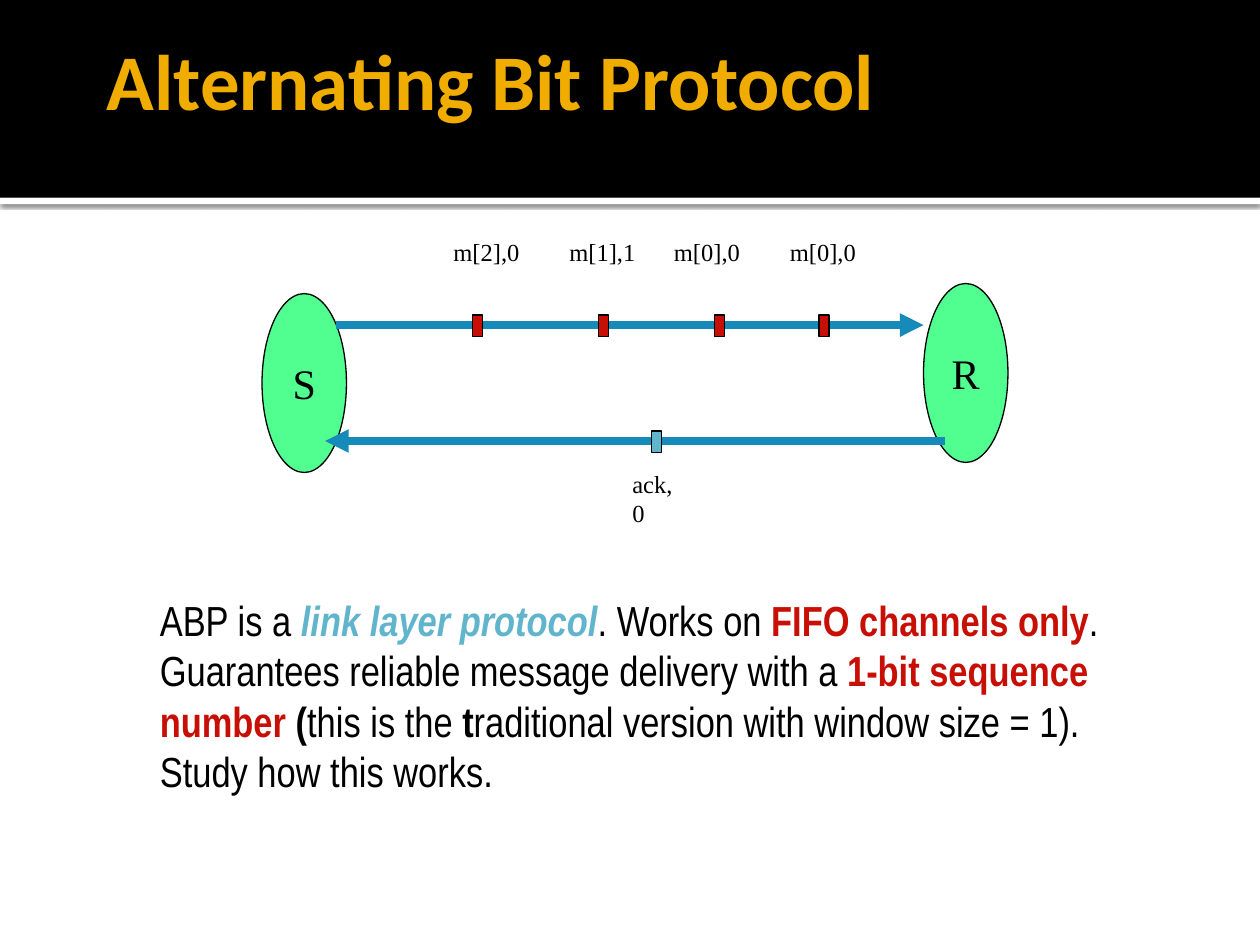
from lxml import etree
from pptx import Presentation
from pptx.dml.color import RGBColor
from pptx.enum import shapes, text
from pptx.oxml import ns
from pptx.util import Inches, Pt

COLORS = {
    "black": "000000",
    "white": "FFFFFF",
    "gold": "F0AD00",
    "green": "51FF91",
    "blue": "168BBA",
    "sky": "60B5CC",
    "red": "C70F05",
}


def color(name):
    return RGBColor.from_string(COLORS[name])


class ProtocolSlide:
    serif = "Times New Roman"
    label_size = 14

    def __init__(self, deck):
        self.page = deck.slides.add_slide(deck.slide_layouts[6])

    def shape(self, kind, left, top, width, height, fill, outlined=True):
        shape = self.page.shapes.add_shape(
            kind, Inches(left), Inches(top), Inches(width), Inches(height))
        shape.shadow.inherit = False
        shape.fill.solid()
        shape.fill.fore_color.rgb = color(fill)
        if outlined:
            shape.line.color.rgb = color("black")
            shape.line.width = Pt(0.75)
        else:
            shape.line.fill.background()
        return shape

    def band(self, top, height, fill):
        return self.shape(shapes.MSO_SHAPE.RECTANGLE, 0, top, 10, height, fill, False)

    def drop_shadow(self, shape):
        effects = shape._element.spPr.find(ns.qn("a:effectLst"))
        shadow = etree.SubElement(
            effects, ns.qn("a:outerShdw"), blurRad=str(Pt(2.5)),
            dist=str(Pt(0.8)), dir="5400000", algn="t", rotWithShape="0")
        tint = etree.SubElement(shadow, ns.qn("a:srgbClr"), val=COLORS["black"])
        etree.SubElement(tint, ns.qn("a:alpha"), val="60000")

    def style(self, span, size, font, ink="black", bold=False, italic=False):
        span.font.size = Pt(size)
        span.font.name = font
        span.font.color.rgb = color(ink)
        span.font.bold = bold
        span.font.italic = italic

    def node(self, left, top, name):
        oval = self.shape(shapes.MSO_SHAPE.OVAL, left, top, 0.67, 1.42, "green")
        frame = oval.text_frame
        frame.word_wrap = False
        frame.vertical_anchor = text.MSO_ANCHOR.MIDDLE
        frame.text = name
        para = frame.paragraphs[0]
        para.alignment = text.PP_ALIGN.CENTER
        self.style(para.runs[0], 24, self.serif)

    def packet(self, left, top, fill):
        self.shape(shapes.MSO_SHAPE.RECTANGLE, left, top, 0.08, 0.17, fill)

    def arrow(self, start, end, y):
        arrow = self.page.shapes.add_connector(
            shapes.MSO_CONNECTOR.STRAIGHT, Inches(start), Inches(y), Inches(end), Inches(y))
        arrow.line.color.rgb = color("blue")
        arrow.line.width = Pt(4.5)
        etree.SubElement(arrow.line._get_or_add_ln(), ns.qn("a:tailEnd"), type="triangle")
        etree.SubElement(arrow._element.spPr, ns.qn("a:effectLst"))

    def textbox(self, left, top, width, height, wrap=True):
        box = self.page.shapes.add_textbox(
            Inches(left), Inches(top), Inches(width), Inches(height))
        box.text_frame.word_wrap = wrap
        return box.text_frame

    def title(self, words):
        frame = self.textbox(0.75, 0, 8.5, 1.25)
        frame.vertical_anchor = text.MSO_ANCHOR.MIDDLE
        frame.margin_right = Inches(0.05)
        frame.text = words
        self.style(frame.paragraphs[0].runs[0], 45, "Calibri", "gold", bold=True)

    def label(self, left, top, width, words):
        frame = self.textbox(left, top, width, 0.33, wrap=False)
        frame.auto_size = text.MSO_AUTO_SIZE.SHAPE_TO_FIT_TEXT
        frame.text = words
        self.style(frame.paragraphs[0].runs[0], self.label_size, self.serif)

    def body(self, paragraphs):
        frame = self.textbox(1.17, 4.67, 7.92, 1.7)
        frame.auto_size = text.MSO_AUTO_SIZE.SHAPE_TO_FIT_TEXT
        for index, spans in enumerate(paragraphs):
            para = frame.add_paragraph() if index else frame.paragraphs[0]
            for words, *look in spans:
                span = para.add_run()
                span.text = words
                self.style(span, 24, "Arial Narrow", *look)


def main():
    deck = Presentation()
    deck.slide_width, deck.slide_height = Inches(10), Inches(7.5)
    slide = ProtocolSlide(deck)

    slide.drop_shadow(slide.band(1.57, 0.05, "white"))
    slide.band(0, 1.57, "black")
    slide.title("Alternating Bit Protocol")

    slide.node(2.08, 2.33, "S")
    slide.node(7.33, 2.25, "R")
    slide.arrow(2.67, 7.33, 2.58)
    slide.arrow(7.5, 2.58, 3.5)

    messages = [
        (3.75, 3.5, "m[2],0"),
        (4.75, 4.42, "m[1],1"),
        (5.67, 5.25, "m[0],0"),
        (6.5, 6.17, "m[0],0"),
    ]
    for packet_left, label_left, words in messages:
        slide.packet(packet_left, 2.5, "red")
        slide.label(label_left, 1.83, 0.73, words)
    slide.packet(5.17, 3.42, "sky")
    slide.label(4.92, 3.67, 0.66, "ack, 0")

    slide.body([
        [("ABP is a ",),
         ("link layer protocol", "sky", True, True),
         (". Works on ",),
         ("FIFO channels only", "red", True),
         (".",)],
        [("Guarantees reliable message delivery with a ",),
         ("1-bit sequence number ", "red", True),
         ("(", "black", True),
         ("this is the ",),
         ("t", "black", True),
         ("raditional version with window size = 1).",)],
        [("Study how this works.",)],
    ])
    deck.save("out.pptx")


if __name__ == "__main__":
    main()
